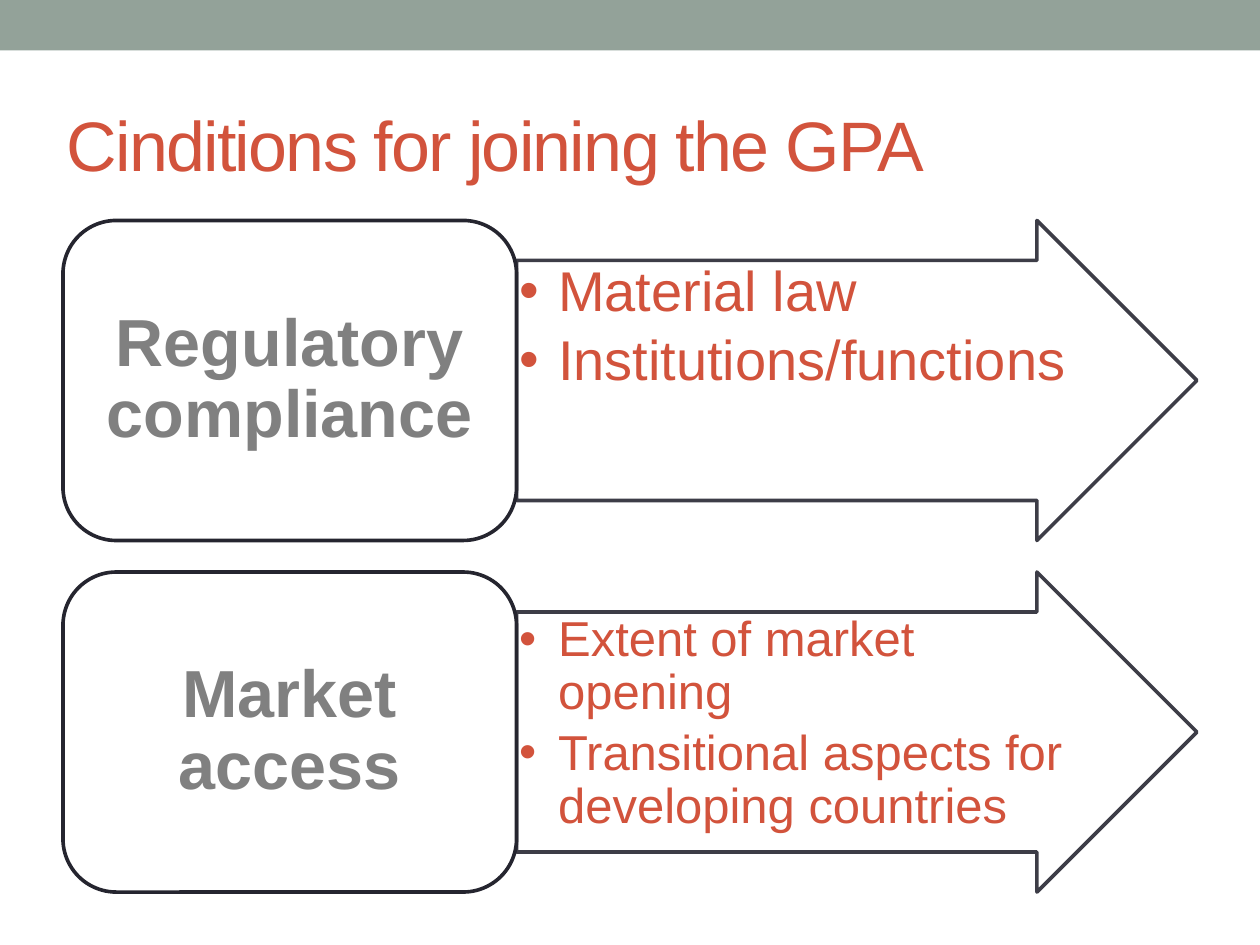
"""Build a slide on the two conditions for joining the GPA."""
from lxml import etree
from pptx import Presentation
from pptx.dml.color import RGBColor
from pptx.enum.shapes import MSO_SHAPE as SHAPE
from pptx.enum.text import MSO_ANCHOR as ANCHOR, PP_ALIGN as ALIGN
from pptx.oxml.ns import qn
from pptx.util import Inches, Pt

TITLE = "Cinditions for joining the GPA"
CONDITIONS = [
    ("Regulatory compliance", 32, ["Material law", "Institutions/functions"]),
    ("Market access", 28, ["Extent of market opening",
                           "Transitional aspects for developing countries"]),
]

SAGE = RGBColor(0x93, 0xA2, 0x99)
RED = RGBColor(0xD2, 0x53, 0x3C)
GREY = RGBColor(0x80, 0x80, 0x80)
WHITE = RGBColor(0xFF, 0xFF, 0xFF)
ARROW_LINE = RGBColor(0x29, 0x29, 0x34)
BOX_LINE = RGBColor(0x25, 0x25, 0x2F)

LEFT, TOP, BOX_W, ARROW_W, ROW_H, ROW_STEP = 0.5, 1.75, 3.6, 5.4, 2.54, 2.79
POINTS_W, SHAFT = 4.45, 0.75
INDENT = Inches(0.31)


def add_shape(s, kind, box, fill, line=None):
    sp = s.shapes.add_shape(kind, *map(Inches, box))
    sp.shadow.inherit = False
    sp.fill.solid()
    sp.fill.fore_color.rgb = fill
    if line is None:
        sp.line.fill.background()
    else:
        sp.line.color.rgb = line
        sp.line.width = Pt(2.08)
    return sp


def set_alpha(sp, percent):
    for color in sp._element.spPr.iter(qn("a:srgbClr")):
        etree.SubElement(color, qn("a:alpha"), val=str(percent * 1000))


def write(sp, lines, size, color, anchor, align, margins, bold=False):
    tf = sp.text_frame
    tf.word_wrap = True
    tf.vertical_anchor = anchor
    tf.margin_left, tf.margin_top, tf.margin_right, tf.margin_bottom = map(Inches, margins)
    tf.text = "\n".join(lines)
    for p in tf.paragraphs:
        p.alignment = align
        font = p.runs[0].font
        font.name, font.size, font.bold = "Arial", Pt(size), bold
        font.color.rgb = color
    return tf.paragraphs


def add_bullet(p):
    pPr = p._p.get_or_add_pPr()
    pPr.set("marL", str(INDENT))
    pPr.set("indent", str(-INDENT))
    etree.SubElement(pPr, qn("a:buFont"), typeface="Arial")
    etree.SubElement(pPr, qn("a:buChar"), char="•")


def add_condition(s, top, label, size, points):
    arrow_left = LEFT + BOX_W
    arrow = add_shape(s, SHAPE.RIGHT_ARROW, (arrow_left, top, ARROW_W, ROW_H),
                      WHITE, ARROW_LINE)
    arrow.adjustments[0], arrow.adjustments[1] = SHAFT, 0.5
    set_alpha(arrow, 90)

    shaft_top = top + ROW_H * (1 - SHAFT) / 2
    bullets = s.shapes.add_textbox(
        *map(Inches, (arrow_left, shaft_top, POINTS_W, ROW_H * SHAFT)))
    for p in write(bullets, points, size, RED, ANCHOR.TOP, ALIGN.LEFT, (0.02,) * 4):
        p.line_spacing = 0.9
        p.space_after = Pt(round(size * 0.15, 1))
        add_bullet(p)

    box = add_shape(s, SHAPE.ROUNDED_RECTANGLE, (LEFT, top, BOX_W, ROW_H), WHITE, BOX_LINE)
    p = write(box, [label], 38, GREY, ANCHOR.MIDDLE, ALIGN.CENTER,
              (0.16, 0.08, 0.16, 0.08), bold=True)[0]
    p.line_spacing = 0.9


def main():
    prs = Presentation()
    prs.slide_width, prs.slide_height = Inches(10), Inches(7.5)
    s = prs.slides.add_slide(prs.slide_layouts[6])

    add_shape(s, SHAPE.RECTANGLE, (0, 0, 10, 0.4), SAGE)
    title = s.shapes.add_textbox(*map(Inches, (0.43, 0.6, 9, 1.08)))
    p = write(title, [TITLE], 40, RED, ANCHOR.MIDDLE, ALIGN.LEFT, (0.1, 0.05, 0.1, 0.05))[0]
    p.runs[0]._r.get_or_add_rPr().set("spc", "-100")

    for i, condition in enumerate(CONDITIONS):
        add_condition(s, TOP + i * ROW_STEP, *condition)

    prs.save("out.pptx")


if __name__ == "__main__":
    main()
